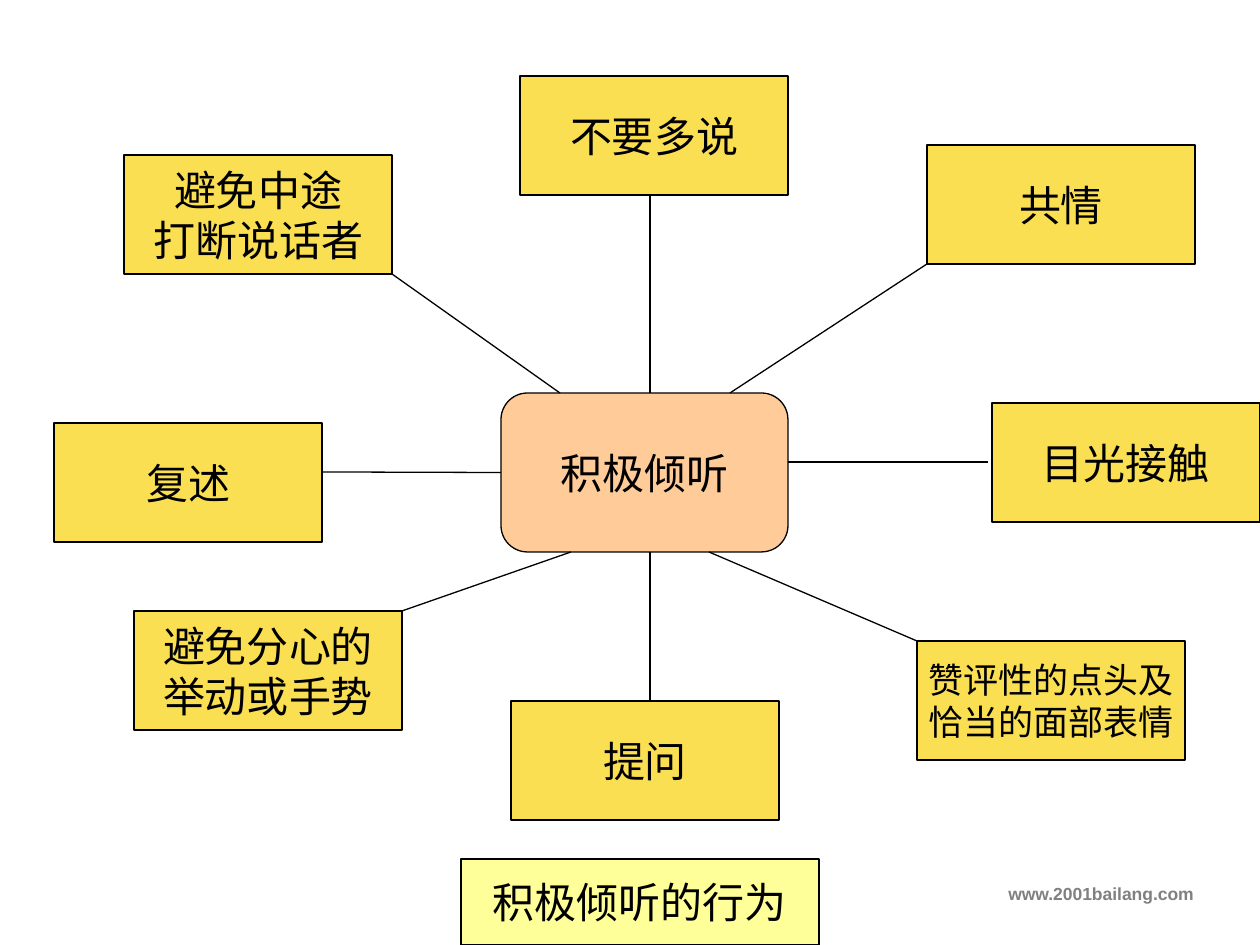
from dataclasses import dataclass
from lxml.etree import SubElement
from pptx import Presentation
from pptx.dml.color import RGBColor
from pptx.enum.shapes import MSO_CONNECTOR, MSO_SHAPE
from pptx.enum.text import MSO_ANCHOR, PP_ALIGN
from pptx.oxml.ns import qn
from pptx.util import Pt

PX = 914400 / 126


@dataclass(frozen=True)
class Theme:
    font: str = "Arial"
    ink: str = "000000"
    muted: str = "808080"
    hub: str = "FFCC99"
    topic: str = "FBDF53"
    title: str = "FFFF99"
    body: int = 24
    small: int = 20
    footer: int = 10
    line: float = 0.75


THEME = Theme()
TOPIC_W, TOPIC_H = 268, 119
HUB = (501, 393, 287, 159)
TOPICS = [
    # text, topic corner, line start in topic, line end in hub
    ("避免中途\n打断说话者", (124, 155), (TOPIC_W, TOPIC_H), (59, 0)),
    ("复述", (54, 423), (TOPIC_W, 49), None),
    ("避免分心的\n举动或手势", (134, 611), (TOPIC_W, 0), (70, 159)),
    ("赞评性的点头及\n恰当的面部表情", (917, 641), (0, 0), (208, 159)),
    ("目光接触", (992, 403), (-4, 59), (287, 69)),
    ("共情", (927, 145), (0, TOPIC_H), (229, 0)),
    ("提问", (511, 701), (139, 0), (149, 159)),
    ("不要多说", (520, 76), (130, TOPIC_H), (149, 0)),
]


def emu(*values):
    return [round(v * PX) for v in values]


def color(code):
    return RGBColor.from_string(code)


def write(tf, text, size=THEME.body, ink=THEME.ink, bold=False,
          align=PP_ALIGN.CENTER, anchor=MSO_ANCHOR.MIDDLE, wrap=False):
    tf.word_wrap = wrap
    tf.vertical_anchor = anchor
    for i, line in enumerate(text.split("\n")):
        p = tf.paragraphs[0] if i == 0 else tf.add_paragraph()
        p.alignment = align
        r = p.add_run()
        r.text = line
        r.font.name = THEME.font
        r.font.size = Pt(size)
        r.font.bold = bold
        r.font.color.rgb = color(ink)


def add_box(s, box, text, fill, shape=MSO_SHAPE.RECTANGLE, **fmt):
    sp = s.shapes.add_shape(shape, *emu(*box))
    sp.shadow.inherit = False
    sp.fill.solid()
    sp.fill.fore_color.rgb = color(fill)
    sp.line.color.rgb = color(THEME.ink)
    sp.line.width = Pt(THEME.line)
    write(sp.text_frame, text, **fmt)
    return sp


def add_spoke(s, start, end):
    cx = s.shapes.add_connector(MSO_CONNECTOR.STRAIGHT, *emu(*start, *end))
    cx.line.color.rgb = color(THEME.ink)
    cx.line.width = Pt(THEME.line)
    SubElement(cx._element.spPr, qn("a:effectLst"))
    return cx


def add_mind_map(s, box):
    left, top = box[:2]
    hub_x, hub_y = left + HUB[0], top + HUB[1]
    hub = add_box(s, (hub_x, hub_y, *HUB[2:]), "积极倾听", THEME.hub,
                  shape=MSO_SHAPE.ROUNDED_RECTANGLE)
    for text, (x, y), (dx, dy), hub_end in TOPICS:
        x, y = left + x, top + y
        size = THEME.small if len(text) > 12 else THEME.body
        add_box(s, (x, y, TOPIC_W, TOPIC_H), text, THEME.topic, size=size)
        end_x, end_y = hub_end or (0, HUB[3] // 2)
        cx = add_spoke(s, (x + dx, y + dy), (hub_x + end_x, hub_y + end_y))
        if hub_end is None:
            cx.end_connect(hub, 1)


def add_title(s, box):
    add_box(s, box, "积极倾听的行为", THEME.title)


def add_footer(s, box):
    tb = s.shapes.add_textbox(*emu(*box))
    write(tb.text_frame, "www.2001bailang.com", size=THEME.footer,
          ink=THEME.muted, bold=True, align=PP_ALIGN.RIGHT,
          anchor=MSO_ANCHOR.TOP, wrap=True)


def main():
    prs = Presentation()
    prs.slide_width, prs.slide_height = emu(1260, 945)
    s = prs.slides.add_slide(prs.slide_layouts[6])
    add_footer(s, (0, 877, 1206, 44))
    add_mind_map(s, (0, 0, 1260, 820))
    add_title(s, (461, 859, 358, 86))
    prs.save("out.pptx")


if __name__ == "__main__":
    main()
